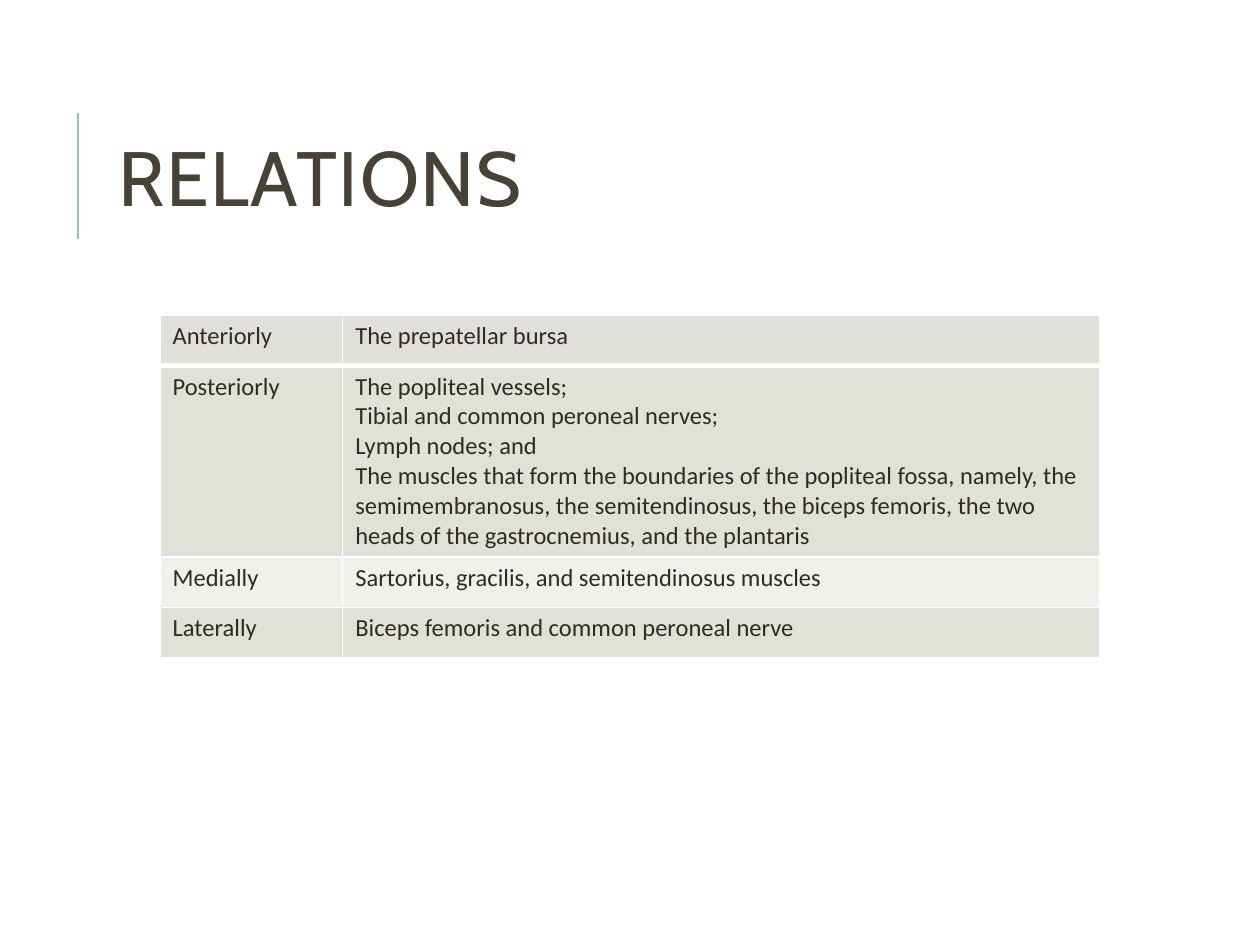
from lxml import etree
from pptx import Presentation
from pptx.dml.color import RGBColor
from pptx.enum.shapes import MSO_CONNECTOR
from pptx.enum.text import MSO_ANCHOR
from pptx.oxml.ns import qn
from pptx.util import Inches, Pt

STRAIGHT = MSO_CONNECTOR.STRAIGHT
MIDDLE = MSO_ANCHOR.MIDDLE

COLORS = {
    "accent": "9CBEBD", "title": "474233", "text": "2E2B21", "border": "FFFFFF",
    "header": "E1DFDA", "dark": "E2E1D7", "light": "F1F0EC",
}
TITLE_FONT = {"name": "Cabin", "size": Pt(44)}
CELL_FONT = {"name": "Calibri", "size": Pt(14)}


def add_run(p, text, font, color):
    r = p.add_run()
    r.text = text
    for name, value in font.items():
        setattr(r.font, name, value)
    r.font.color.rgb = RGBColor.from_string(COLORS[color])
    return r


def set_borders(cell, widths):
    tcPr = cell._tc.get_or_add_tcPr()
    for i, (side, width) in enumerate(widths.items()):
        ln = etree.Element(qn(f"a:ln{side}"), w=str(Pt(width)))
        fill = etree.SubElement(ln, qn("a:solidFill"))
        etree.SubElement(fill, qn("a:srgbClr"), val=COLORS["border"])
        tcPr.insert(i, ln)


prs = Presentation()
prs.slide_width, prs.slide_height = Inches(10), Inches(7.5)
s = prs.slides.add_slide(prs.slide_layouts[6])

# Accent line beside the title
line = s.shapes.add_connector(STRAIGHT, Inches(0.62), Inches(1.9), Inches(0.62), Inches(0.9))
line.line.color.rgb = RGBColor.from_string(COLORS["accent"])
line.line.width = Pt(1.5)
etree.SubElement(line._element.spPr, qn("a:effectLst"))

# Title
sp = s.shapes.add_textbox(Inches(0.84), Inches(0.64), Inches(7.97), Inches(1.64))
tf = sp.text_frame
tf.word_wrap = True
tf.vertical_anchor = MIDDLE
p = tf.paragraphs[0]
p.line_spacing = 0.8
r = add_run(p, "RELATIONS", TITLE_FONT, "title")
r._r.get_or_add_rPr().set("spc", "100")

# Relations table: fill, row height, direction, structures
rows = [
    ("header", 0.4, "Anteriorly", ["The prepatellar bursa"]),
    ("dark", 1.52, "Posteriorly", [
        "The popliteal vessels;",
        "Tibial and common peroneal nerves;",
        "Lymph nodes; and",
        "The muscles that form the boundaries of the popliteal fossa, namely, the "
        "semimembranosus, the semitendinosus, the biceps femoris, the two heads of "
        "the gastrocnemius, and the plantaris",
    ]),
    ("light", 0.4, "Medially", ["Sartorius, gracilis, and semitendinosus muscles"]),
    ("dark", 0.4, "Laterally", ["Biceps femoris and common peroneal nerve"]),
]
table = s.shapes.add_table(len(rows), 2, Inches(1.27), Inches(2.5),
                           Inches(7.46), Inches(2.72)).table
for col, width in zip(table.columns, (1.45, 6.01)):
    col.width = Inches(width)

for i, (fill, height, direction, structures) in enumerate(rows):
    table.rows[i].height = Inches(height)
    # A thicker rule separates the first row from the rest
    widths = {"L": 1, "R": 1, "T": 3 if i == 1 else 1, "B": 3 if i == 0 else 1}
    for j, lines in enumerate(([direction], structures)):
        cell = table.cell(i, j)
        cell.fill.solid()
        cell.fill.fore_color.rgb = RGBColor.from_string(COLORS[fill])
        set_borders(cell, widths)
        tf = cell.text_frame
        for k, text in enumerate(lines):
            p = tf.add_paragraph() if k else tf.paragraphs[0]
            add_run(p, text, CELL_FONT, "text").font.bold = False

prs.save("out.pptx")
